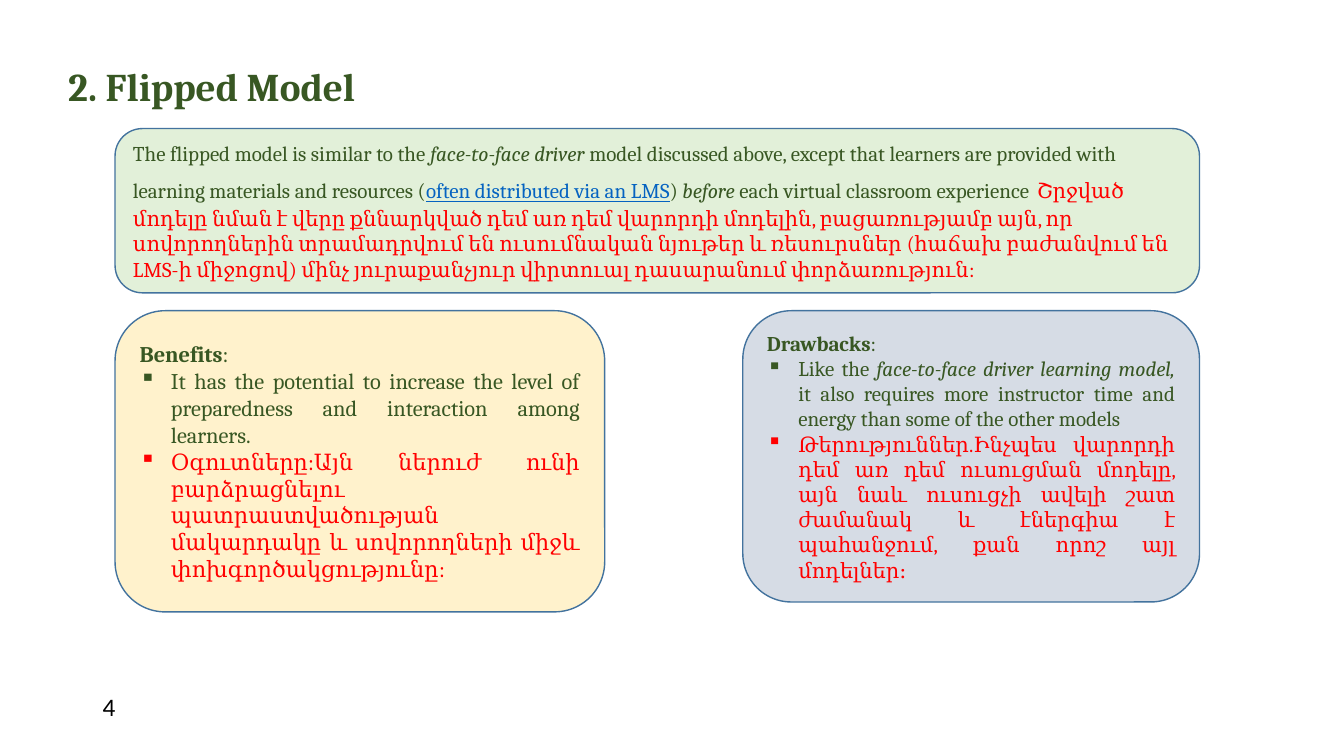
"""Build the slide on the flipped learning model."""
from lxml import etree
from pptx import Presentation
from pptx.dml.color import RGBColor
from pptx.enum import shapes, text
from pptx.oxml.ns import qn
from pptx.util import Cm, Pt

COLORS = {
    "green": "385723", "red": "FF0000", "link": "0563C1", "black": "000000",
    "edge": "43739E", "mint": "E2F0D9", "cream": "FFF2CC", "slate": "D6DCE5",
}
STYLES = {
    "plain": {}, "bold": {"bold": True}, "italic": {"italic": True},
    "link": {"color": "link", "underline": True},
    "gap": {"size": 24}, "armenian": {"color": "red"},
}

TITLE = "2. Flipped Model"
PAGE_NUMBER = "4"
INTRO = [[
    ("The flipped model is similar to the ", "plain"),
    ("face-to-face driver ", "italic"),
    ("model discussed above, except that learners are provided with "
     "learning materials and resources (", "plain"),
    ("often distributed via an LMS", "link"),
    (") ", "plain"),
    ("before", "italic"),
    (" each virtual classroom experience", "plain"),
    (" ", "gap"),
    ("Շրջված մոդելը նման է վերը քննարկված դեմ առ դեմ վարորդի մոդելին, "
     "բացառությամբ այն, որ սովորողներին տրամադրվում են ուսումնական նյութեր և "
     "ռեսուրսներ (հաճախ բաժանվում են LMS-ի միջոցով) մինչ յուրաքանչյուր "
     "վիրտուալ դասարանում փորձառություն:", "armenian"),
]]
BENEFITS = [
    [("Benefits", "bold"), (":", "plain")],
    [("It has the potential to increase the level of preparedness and "
      "interaction among learners.", "plain")],
    [("Օգուտները:Այն ներուժ ունի բարձրացնելու պատրաստվածության մակարդակը և "
      "սովորողների միջև փոխգործակցությունը:", "armenian")],
]
DRAWBACKS = [
    [("Drawbacks", "bold"), (":", "plain")],
    [("Like the ", "plain"),
     ("face-to-face driver learning model, ", "italic"),
     ("it also requires more instructor time and energy than some of the "
      "other models", "plain")],
    [("Թերություններ.Ինչպես վարորդի դեմ առ դեմ ուսուցման մոդելը, այն նաև "
      "ուսուցչի ավելի շատ ժամանակ և էներգիա է պահանջում, քան որոշ այլ "
      "մոդելներ։", "armenian")],
]

LEFT, RIGHT = 2.9, 30.23
INTRO_TOP, CARD_TOP = 3.24, 7.83
BENEFITS_W, DRAWBACKS_W = 12.34, 11.51
CARDS = [
    ((LEFT, INTRO_TOP, RIGHT - LEFT, 4.14), "mint", 15, INTRO),
    ((LEFT, CARD_TOP, BENEFITS_W, 7.59), "cream", 16, BENEFITS),
    ((RIGHT - DRAWBACKS_W, CARD_TOP, DRAWBACKS_W, 7.34), "slate", 15, DRAWBACKS),
]


def rgb(name):
    return RGBColor.from_string(COLORS[name])


def add_run(p, words, size, color="green", font="Cambria", **look):
    r = p.add_run()
    r.text = words
    r.font.name, r.font.size = font, Pt(size)
    r.font.color.rgb = rgb(color)
    for key, value in look.items():
        setattr(r.font, key, value)


def add_bullet(p):
    pPr = p._p.get_or_add_pPr()
    pPr.set("marL", str(Cm(0.79)))
    pPr.set("indent", str(-Cm(0.79)))
    etree.SubElement(pPr, qn("a:buChar")).set("char", "▪")


def add_label(s, box, words, size, wrap=True, **look):
    tf = s.shapes.add_textbox(*map(Cm, box)).text_frame
    tf.word_wrap = wrap
    add_run(tf.paragraphs[0], words, size, **look)


def add_card(s, box, fill, size, paragraphs):
    sp = s.shapes.add_shape(shapes.MSO_SHAPE.ROUNDED_RECTANGLE, *map(Cm, box))
    sp.shadow.inherit = False
    sp.fill.solid()
    sp.fill.fore_color.rgb = rgb(fill)
    sp.line.color.rgb = rgb("edge")
    sp.line.width = Pt(1)
    tf = sp.text_frame
    tf.word_wrap = True
    tf.vertical_anchor = text.MSO_ANCHOR.MIDDLE
    align = text.PP_ALIGN.JUSTIFY if len(paragraphs) > 1 else text.PP_ALIGN.LEFT
    for i, runs in enumerate(paragraphs):
        p = tf.add_paragraph() if i else tf.paragraphs[0]
        p.alignment = align
        if i:
            add_bullet(p)
        for words, style in runs:
            add_run(p, words, **{"size": size, **STYLES[style]})


def main():
    prs = Presentation()
    prs.slide_width, prs.slide_height = Cm(33.87), Cm(19.05)
    s = prs.slides.add_slide(prs.slide_layouts[6])
    add_label(s, (2.34, 17.3, 1.27, 1.02), PAGE_NUMBER, 18, wrap=False,
              color="black", font="Calibri")
    add_label(s, (1.47, 1.45, 23.52, 1.45), TITLE, 28, bold=True)
    for card in CARDS:
        add_card(s, *card)
    prs.save("out.pptx")


if __name__ == "__main__":
    main()
